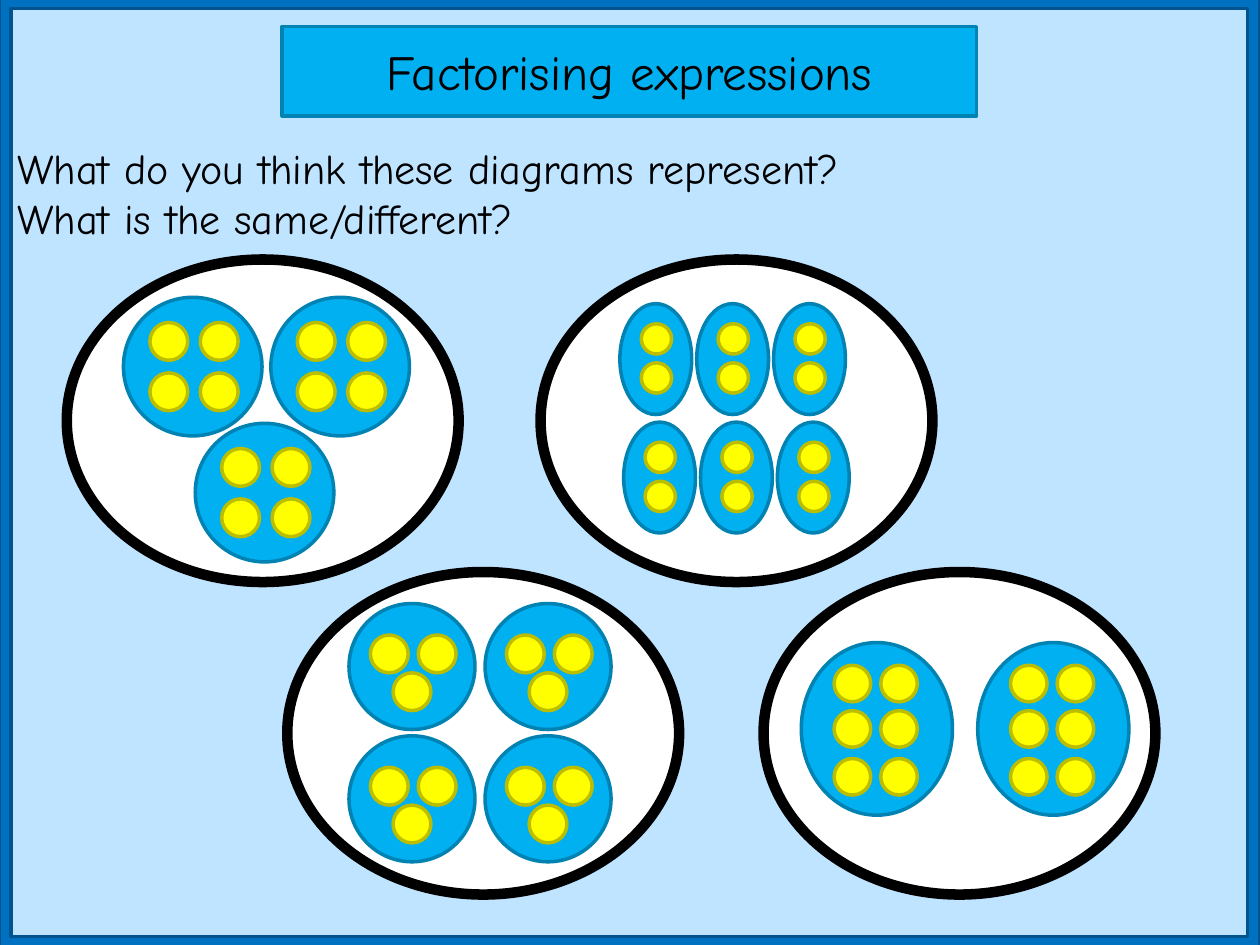
import itertools

import pptx
import pptx.dml.color
import pptx.enum.shapes
import pptx.enum.text
import pptx.util

PX = 9144  # EMU per px, 100 px to the inch
FONT = "Comic Neue"
SHAPE = pptx.enum.shapes.MSO_SHAPE


def rgb(value):
    return pptx.dml.color.RGBColor.from_string(value)


def add_outlined(shapes, kind, box, fill, line, width=2):
    """Add a filled preset shape; box is left, top, width, height in px."""
    shape = shapes.add_shape(kind, *(n * PX for n in box))
    shape.shadow.inherit = False
    shape.fill.solid()
    shape.fill.fore_color.rgb = rgb(fill)
    shape.line.color.rgb = rgb(line)
    shape.line.width = pptx.util.Pt(width)
    return shape


presentation = pptx.Presentation()
presentation.slide_width = 1000 * PX
presentation.slide_height = 750 * PX
slide = presentation.slides.add_slide(presentation.slide_layouts[5])
slide.background.fill.solid()
slide.background.fill.fore_color.rgb = rgb("BFE4FF")

border = add_outlined(slide.shapes, SHAPE.FRAME, (-1, -3, 1001, 756), "0070C0", "00538E")
border.adjustments[0] = 0.013

heading = slide.shapes.title
heading.left, heading.top, heading.width, heading.height = (n * PX for n in (224, 21, 551, 71))
heading.fill.solid()
heading.fill.fore_color.rgb = rgb("00B0F0")
heading.line.color.rgb = rgb("0082B2")
heading.line.width = pptx.util.Pt(2)
heading.text_frame.text = "Factorising expressions"
heading.text_frame.vertical_anchor = pptx.enum.text.MSO_ANCHOR.MIDDLE
heading.text_frame.auto_size = pptx.enum.text.MSO_AUTO_SIZE.NONE
heading.text_frame.paragraphs[0].alignment = pptx.enum.text.PP_ALIGN.CENTER

questions = slide.shapes.add_textbox(*(n * PX for n in (4, 108, 984, 91)))
questions.text_frame.word_wrap = True
questions.text_frame.text = "What do you think these diagrams represent?\nWhat is the same/different?"

for block, size in ((heading, 28), (questions, 24)):
    for paragraph in block.text_frame.paragraphs:
        for run in paragraph.runs:
            run.font.name = FONT
            run.font.size = pptx.util.Pt(size)
            run.font.color.rgb = rgb("000000")

# Each diagram: outer corner, group size, group corners,
# counter diameter, counter offsets within a group
diagrams = [
    ((53, 206), (110, 110), [(98, 236), (215, 236), (155, 336)],
     30, list(itertools.product((21, 61), (20, 60)))),
    ((228, 454), (100, 100), list(itertools.product((277, 385), (479, 584))),
     30, [(17, 25), (55, 25), (35, 55)]),
    ((429, 206), (57, 88),
     [(left + 61 * column, top) for left, top in ((492, 241), (495, 335)) for column in range(3)],
     24, [(17, 16), (17, 47)]),
    ((606, 454), (120, 137), [(636, 510), (776, 510)],
     29, list(itertools.product((26, 63), (18, 54, 92)))),
]

for corner, group_size, group_corners, diameter, offsets in diagrams:
    diagram = slide.shapes.add_group_shape().shapes
    add_outlined(diagram, SHAPE.OVAL, (*corner, 311, 256), "FFFFFF", "000000", 6)
    for left, top in group_corners:
        add_outlined(diagram, SHAPE.OVAL, (left, top, *group_size), "00B0F0", "0082B2")
        for across, down in offsets:
            counter_box = (left + across, top + down, diameter, diameter)
            add_outlined(diagram, SHAPE.OVAL, counter_box, "FFFF00", "BDBD00")

presentation.save("out.pptx")
